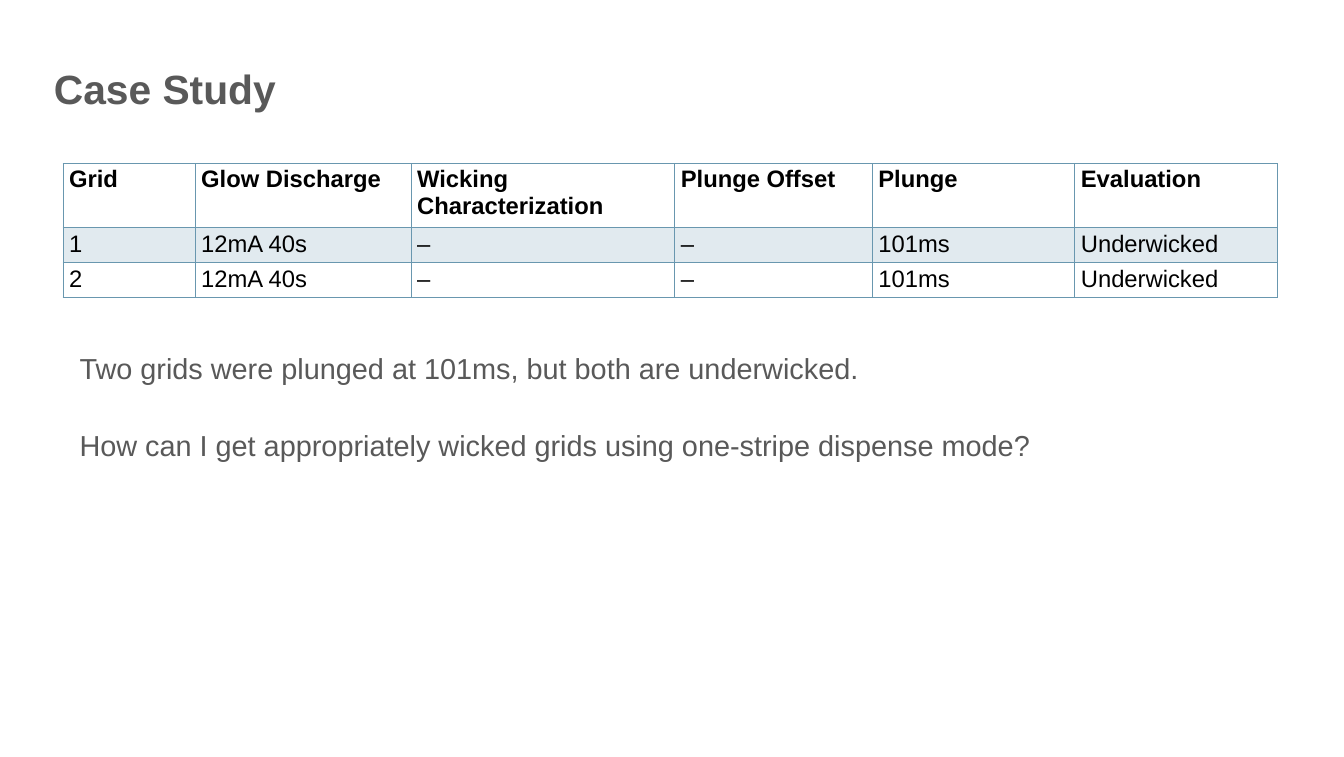
from lxml.etree import SubElement
from pptx import Presentation
from pptx.dml.color import RGBColor
from pptx.enum.text import MSO_ANCHOR, PP_ALIGN
from pptx.oxml.ns import qn
from pptx.util import Inches, Pt

COLORS = {"text": "595959", "cell": "000000", "border": "6997AF", "band": "E1EAEF"}
COLUMN_WIDTHS = [2.16, 3.53, 4.31, 3.23, 3.31, 3.31]
ROW_HEIGHTS = [1.05, 0.57, 0.57]
ROWS = [
    ["Grid", "Glow Discharge", "Wicking Characterization", "Plunge Offset", "Plunge", "Evaluation"],
    ["1", "12mA 40s", "–", "–", "101ms", "Underwicked"],
    ["2", "12mA 40s", "–", "–", "101ms", "Underwicked"],
]
REMARKS = [
    "Two grids were plunged at 101ms, but both are underwicked.",
    "How can I get appropriately wicked grids using one-stripe dispense mode?",
]


def style(para, size, color, bold=False):
    para.alignment = PP_ALIGN.LEFT
    para.font.name = "Arial"
    para.font.size = Pt(size)
    para.font.bold = bold
    para.font.color.rgb = RGBColor.from_string(COLORS[color])


def add_border(cell, side, points):
    line = SubElement(cell._tc.get_or_add_tcPr(), qn(f"a:ln{side}"), w=str(Pt(points)))
    fill = SubElement(line, qn("a:solidFill"))
    SubElement(fill, qn("a:srgbClr"), val=COLORS["border"])


deck = Presentation()
deck.slide_width, deck.slide_height = Inches(21.97), Inches(12.37)
page = deck.slides.add_slide(deck.slide_layouts[5])

# Title
title = page.shapes.title
title.left, title.top, title.width, title.height = map(Inches, (0.78, 0.8, 14.53, 1.11))
title.text_frame.text = "Case Study"
title.text_frame.vertical_anchor = MSO_ANCHOR.BOTTOM
heading = title.text_frame.paragraphs[0]
heading.line_spacing = 0.9
style(heading, 48, "text", bold=True)

# Remarks
box = page.shapes.add_textbox(Inches(1.1), Inches(5.7), Inches(18.16), Inches(2.76))
frame = box.text_frame
frame.word_wrap = True
frame.margin_left = frame.margin_right = Inches(0.2)
frame.margin_top = frame.margin_bottom = Inches(0.1)
frame.text = "\n".join(REMARKS)
for para in frame.paragraphs:
    para.line_spacing = 0.9
    style(para, 34, "text")
frame.paragraphs[1].space_before = Pt(54)

# Table of grids
table = page.shapes.add_table(
    len(ROWS), len(COLUMN_WIDTHS), Inches(1.03), Inches(2.67),
    Inches(sum(COLUMN_WIDTHS)), Inches(sum(ROW_HEIGHTS)),
).table
table.first_row = table.horz_banding = False
for column, width in zip(table.columns, COLUMN_WIDTHS):
    column.width = Inches(width)
for row_index, (row, height, values) in enumerate(zip(table.rows, ROW_HEIGHTS, ROWS)):
    row.height = Inches(height)
    is_header = row_index == 0
    for cell, value in zip(row.cells, values):
        cell.text = value
        style(cell.text_frame.paragraphs[0], 28, "cell", bold=is_header)
        for side in "LRTB":
            add_border(cell, side, 2 if is_header and side == "B" else 1)
        if row_index % 2:
            cell.fill.solid()
            cell.fill.fore_color.rgb = RGBColor.from_string(COLORS["band"])
        else:
            cell.fill.background()

deck.save("out.pptx")
